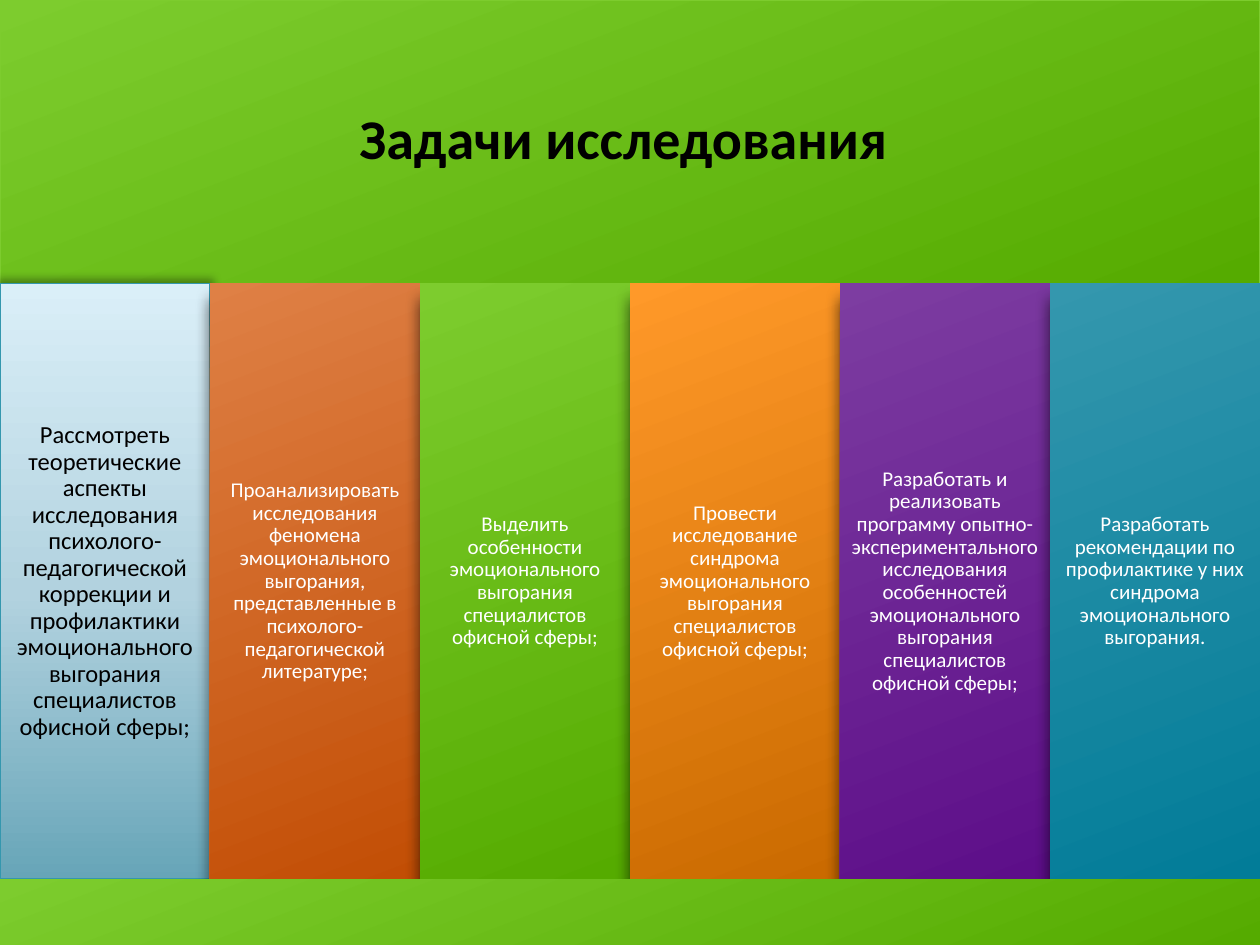
from lxml.etree import SubElement
from pptx import Presentation
from pptx.dml.color import RGBColor
from pptx.enum.shapes import MSO_SHAPE
from pptx.enum.text import MSO_ANCHOR, MSO_AUTO_SIZE, PP_ALIGN
from pptx.oxml.ns import qn
from pptx.util import Pt

PX = 9525
W, H = 960, 720
TITLE_H, CARD_H = 216, 454
FONT = "Calibri"

BLACK = RGBColor(0x00, 0x00, 0x00)
WHITE = RGBColor(0xFF, 0xFF, 0xFF)
GREEN = (RGBColor(0x7D, 0xCC, 0x2E), RGBColor(0x55, 0xAB, 0x00))
ICE = (RGBColor(0x67, 0xA5, 0xB8), RGBColor(0xB2, 0xD2, 0xDF), RGBColor(0xDA, 0xEF, 0xF8))
RUST = (RGBColor(0xDF, 0x80, 0x45), RGBColor(0xC2, 0x4E, 0x05))
ORANGE = (RGBColor(0xFF, 0x99, 0x29), RGBColor(0xCA, 0x6A, 0x00))
PURPLE = (RGBColor(0x7D, 0x3D, 0xA1), RGBColor(0x5D, 0x0E, 0x89))
TEAL = (RGBColor(0x34, 0x97, 0xAE), RGBColor(0x02, 0x7C, 0x98))

TITLE_SHADOW = (60, 6, 3, 100)
FIRST_SHADOW = (32, 5, 1, 102)
DEEP_SHADOW = (70, 9, 9, 100)

TASKS = [
    ("Рассмотреть теоретические аспекты исследования психолого-педагогической коррекции "
     "и профилактики эмоционального выгорания специалистов офисной сферы;", ICE),
    ("Проанализировать исследования феномена эмоционального выгорания, представленные "
     "в психолого-педагогической литературе;", RUST),
    ("Выделить особенности эмоционального выгорания специалистов офисной сферы;", GREEN),
    ("Провести исследование синдрома эмоционального выгорания специалистов офисной сферы;", ORANGE),
    ("Разработать и реализовать программу опытно- экспериментального исследования "
     "особенностей эмоционального выгорания специалистов офисной сферы;", PURPLE),
    ("Разработать рекомендации по профилактике у них синдрома эмоционального выгорания.", TEAL),
]


def place(sp, box):
    sp.left, sp.top, sp.width, sp.height = (v * PX for v in box)


def add_shadow(sp, alpha, blur, dist, scale):
    sp.shadow.inherit = False
    effects = sp.element.spPr.find(qn("a:effectLst"))
    shadow = SubElement(effects, qn("a:outerShdw"), blurRad=str(Pt(blur)), dist=str(Pt(dist)),
                        dir="5400000", sx=str(scale * 1000), sy=str(scale * 1000),
                        algn="ctr", rotWithShape="0")
    color = SubElement(shadow, qn("a:srgbClr"), val=str(BLACK))
    SubElement(color, qn("a:alpha"), val=str(alpha * 1000))


def fill_gradient(sp, colors, angle):
    sp.fill.gradient()
    sp.fill.gradient_angle = angle
    stops = sp.element.spPr.find(qn("a:gradFill")).find(qn("a:gsLst"))
    for gs in list(stops):
        stops.remove(gs)
    positions = (0, 48, 100) if len(colors) == 3 else (0, 100)
    for pos, color in zip(positions, colors):
        gs = SubElement(stops, qn("a:gs"), pos=str(pos * 1000))
        SubElement(gs, qn("a:srgbClr"), val=str(color))


def add_panel(s, box, colors, shadow, angle=291, line=None):
    sp = s.shapes.add_shape(MSO_SHAPE.RECTANGLE, *(v * PX for v in box))
    fill_gradient(sp, colors, angle)
    if line is None:
        sp.line.fill.background()
    else:
        sp.line.color.rgb = line
        sp.line.width = Pt(1)
    add_shadow(sp, *shadow)
    return sp


def write_text(sp, text, size, color, inset, bold=False):
    tf = sp.text_frame
    tf.word_wrap = True
    tf.auto_size = MSO_AUTO_SIZE.NONE
    tf.vertical_anchor = MSO_ANCHOR.MIDDLE
    tf.margin_left = tf.margin_right = tf.margin_top = tf.margin_bottom = inset * PX
    p = tf.paragraphs[0]
    p.alignment = PP_ALIGN.CENTER
    p.line_spacing = 0.9
    r = p.add_run()
    r.text = text
    r.font.name = FONT
    r.font.size = Pt(size)
    r.font.bold = bold
    r.font.color.rgb = color


def add_title(s, box):
    add_panel(s, box, GREEN, TITLE_SHADOW, line=GREEN[0])
    title = s.shapes.title
    s.shapes.element.append(title.element)
    place(title, box)
    write_text(title, "Задачи исследования ", 32, BLACK, 12, bold=True)


def add_tasks(s, box):
    x, y, w, h = box
    card_w = w // len(TASKS)
    for i, (text, colors) in enumerate(TASKS):
        card = (x + i * card_w, y, card_w, h)
        if i == 0:
            sp = add_panel(s, card, colors, FIRST_SHADOW, angle=90, line=TEAL[0])
            write_text(sp, text, 14, BLACK, 6)
        else:
            sp = add_panel(s, card, colors, DEEP_SHADOW)
            write_text(sp, text, 12, WHITE, 5)


def main():
    prs = Presentation()
    prs.slide_width, prs.slide_height = W * PX, H * PX
    s = prs.slides.add_slide(prs.slide_layouts[5])
    s.background.fill.solid()
    s.background.fill.fore_color.rgb = BLACK
    add_title(s, (0, 0, W, TITLE_H))
    add_tasks(s, (0, TITLE_H, W, CARD_H))
    footer_y = TITLE_H + CARD_H
    add_panel(s, (0, footer_y, W, H - footer_y), GREEN, DEEP_SHADOW)
    prs.save("out.pptx")


if __name__ == "__main__":
    main()
